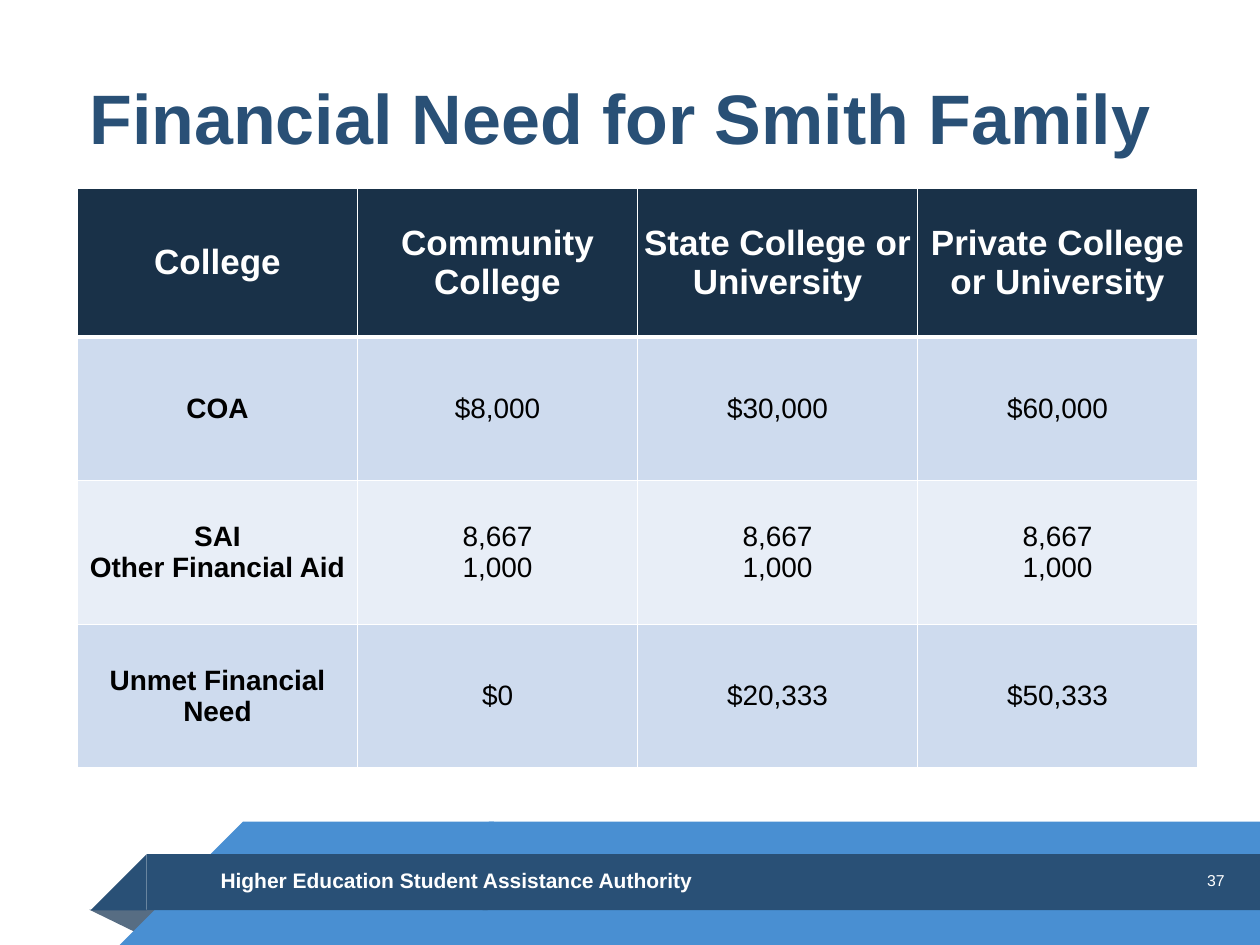
from dataclasses import dataclass

from lxml.etree import SubElement
from pptx import Presentation
from pptx.dml.color import RGBColor
from pptx.enum.shapes import MSO_SHAPE
from pptx.enum.text import MSO_ANCHOR, PP_ALIGN
from pptx.oxml.ns import qn
from pptx.util import Inches, Pt

UNIT = Inches(0.1)
INSET = Inches(0.05)
ROWS = [
    ["College", "Community College", "State College or University", "Private College or University"],
    ["COA", "$8,000", "$30,000", "$60,000"],
    ["SAI\nOther Financial Aid", "8,667\n1,000", "8,667\n1,000", "8,667\n1,000"],
    ["Unmet Financial Need", "$0", "$20,333", "$50,333"],
]


@dataclass(frozen=True)
class Theme:
    """Colours, font and type sizes of the slide."""
    font: str = "Arial"
    white: str = "FFFFFF"
    black: str = "000000"
    navy: str = "295076"
    blue: str = "498FD2"
    fold: str = "576D83"
    header: str = "193148"
    bands: tuple = ("E8EEF7", "CEDBEE")
    title_size: int = 40
    header_size: int = 20
    body_size: int = 16
    footer_size: int = 12
    number_size: int = 9


THEME = Theme()


@dataclass(frozen=True)
class Box:
    """A rectangle on a grid of 100 columns by 75 rows."""
    left: float
    top: float
    width: float
    height: float

    def inner(self, left, top, width, height):
        """Return a box placed relative to this one."""
        return Box(self.left + left, self.top + top, width, height)

    def lengths(self):
        """Return left, top, width and height as slide lengths."""
        return [round(value * UNIT) for value in (self.left, self.top, self.width, self.height)]


def paint(shape, color):
    """Give a shape a flat fill without outline or shadow."""
    shape.shadow.inherit = False
    shape.fill.solid()
    shape.fill.fore_color.rgb = RGBColor.from_string(color)
    shape.line.fill.background()


def add_polygon(slide, points, color):
    """Draw a closed outline through grid points."""
    start, *others = [(round(x * UNIT), round(y * UNIT)) for x, y in points]
    builder = slide.shapes.build_freeform(*start, scale=1.0)
    builder.add_line_segments(others, close=True)
    paint(builder.convert_to_shape(), color)


def add_ribbon(slide, box, seam, color):
    """Draw a band with a slanted left end and a body split at the seam."""
    slant = box.height
    bottom = box.top + slant
    corner = box.left + slant
    add_polygon(slide, [(box.left, bottom), (corner, box.top), (corner, bottom)], color)
    for part in (box.inner(slant, 0, seam - slant + 0.4, slant),
                 box.inner(seam, 0, box.width - seam, slant)):
        paint(slide.shapes.add_shape(MSO_SHAPE.RECTANGLE, *part.lengths()), color)


def write(frame, text, size, color, bold=False, align=PP_ALIGN.LEFT):
    """Fill a text frame with evenly formatted paragraphs."""
    frame.text = text
    for paragraph in frame.paragraphs:
        paragraph.alignment = align
        font = paragraph.font
        font.name, font.size, font.bold = THEME.font, Pt(size), bold
        font.color.rgb = RGBColor.from_string(color)


def set_frame(frame):
    """Centre a text frame vertically, with narrow margins and wrapping."""
    frame.word_wrap = True
    frame.vertical_anchor = MSO_ANCHOR.MIDDLE
    frame.margin_left = frame.margin_right = frame.margin_top = frame.margin_bottom = INSET


def add_label(slide, box, text, size, **style):
    """Add a white text box."""
    frame = slide.shapes.add_textbox(*box.lengths()).text_frame
    set_frame(frame)
    write(frame, text, size, THEME.white, **style)


def set_borders(cell, top, bottom):
    """Give a cell white borders with the given top and bottom widths."""
    properties = cell._tc.get_or_add_tcPr()
    for position, (side, width) in enumerate(
            [("lnL", 1), ("lnR", 1), ("lnT", top), ("lnB", bottom)]):
        line = SubElement(properties, qn(f"a:{side}"), w=str(Pt(width)))
        fill = SubElement(line, qn("a:solidFill"))
        SubElement(fill, qn("a:srgbClr"), val=THEME.white)
        properties.insert(position, line)


def place_title(slide, box, text):
    """Move and format the title placeholder."""
    title = slide.shapes.title
    title.left, title.top, title.width, title.height = box.lengths()
    set_frame(title.text_frame)
    write(title.text_frame, text, THEME.title_size, THEME.navy, True, PP_ALIGN.CENTER)


def format_cell(cell, text, row, column):
    """Style one table cell by its row and column."""
    header = row == 0
    cell.fill.solid()
    cell.fill.fore_color.rgb = RGBColor.from_string(
        THEME.header if header else THEME.bands[row % 2])
    cell.vertical_anchor = MSO_ANCHOR.MIDDLE
    cell.margin_left = cell.margin_right = cell.margin_top = cell.margin_bottom = INSET
    write(cell.text_frame, text,
          THEME.header_size if header else THEME.body_size,
          THEME.white if header else THEME.black,
          header or column == 0, PP_ALIGN.CENTER)
    set_borders(cell, 3 if row == 1 else 1, 3 if header else 1)


def place_table(slide, box, header_height):
    """Add the need table with equal columns and equal body rows."""
    table = slide.shapes.add_table(len(ROWS), len(ROWS[0]), *box.lengths()).table
    body_height = (box.height - header_height) / (len(ROWS) - 1)
    for column in table.columns:
        column.width = round(box.width * UNIT / len(ROWS[0]))
    for row, texts in enumerate(ROWS):
        table.rows[row].height = round((body_height if row else header_height) * UNIT)
        for column, text in enumerate(texts):
            format_cell(table.cell(row, column), text, row, column)


def place_footer(slide, box):
    """Draw the folded ribbons with the organisation name and slide number."""
    fold_top = box.top + 7
    add_polygon(slide, [(box.left, fold_top), (box.left + 5.8, fold_top),
                        (box.left + 3.9, fold_top + 1.9)], THEME.fold)
    add_ribbon(slide, box.inner(2.4, 0, box.width - 2.4, box.height), 29.3, THEME.blue)
    add_ribbon(slide, box.inner(0.1, 2.6, box.width - 0.1, 4.45), 31.1, THEME.navy)
    add_label(slide, box.inner(9.9, 3.2, 42.2, 2.9),
              "Higher Education Student Assistance Authority", THEME.footer_size, bold=True)
    add_label(slide, box.inner(61.6, 3.4, 29, 2.5), "37", THEME.number_size,
              align=PP_ALIGN.RIGHT)


def main():
    """Build and save the slide."""
    presentation = Presentation()
    presentation.slide_width, presentation.slide_height = 100 * UNIT, 75 * UNIT
    slide = presentation.slides.add_slide(presentation.slide_layouts[5])
    place_footer(slide, Box(7.1, 65.2, 92.9, 9.8))
    place_title(slide, Box(0.1, 3, 98.2, 12.5), "Financial Need for Smith Family")
    place_table(slide, Box(6.15, 14.95, 88.9, 46), 11.8)
    presentation.save("out.pptx")


if __name__ == "__main__":
    main()
